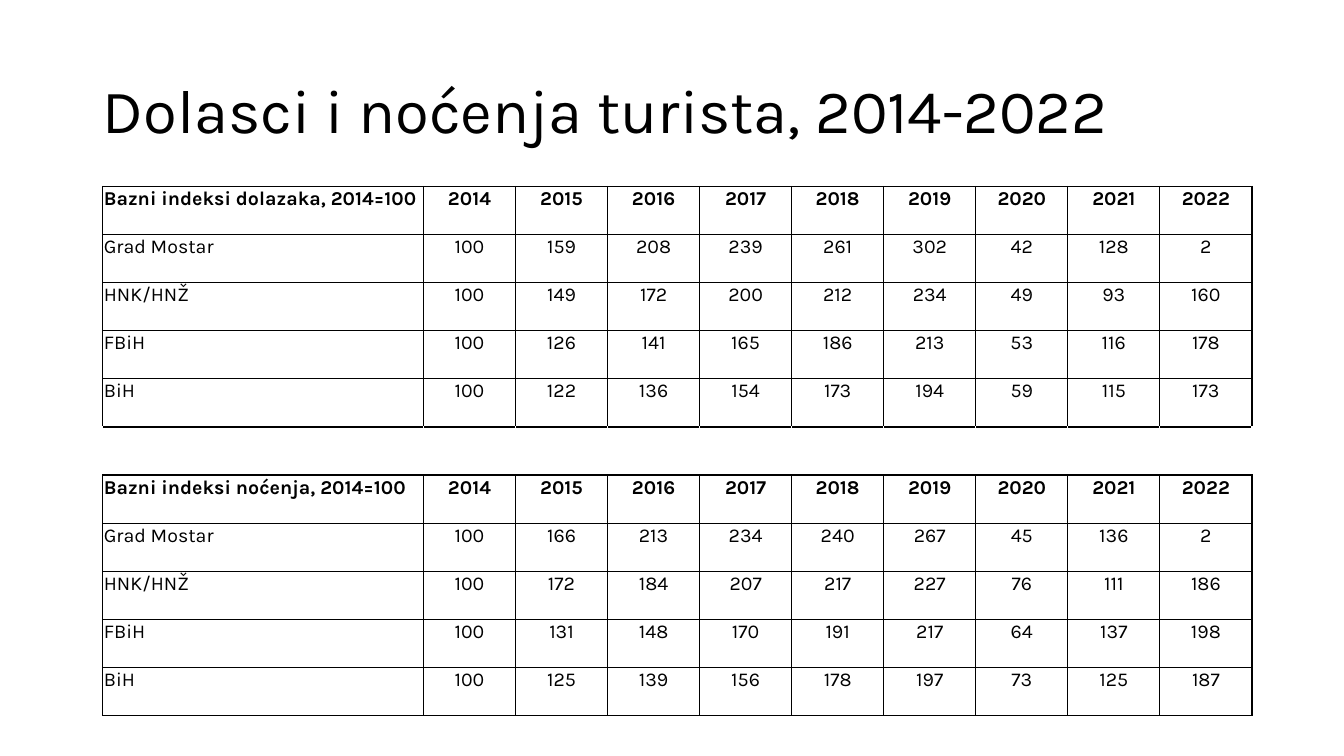
import dataclasses

import lxml.etree
import pptx
import pptx.dml.color
import pptx.enum.text
import pptx.oxml.ns
import pptx.util

WIDTH, HEIGHT = 13.33, 7.5
FONT = "Karla"
COLORS = {"ink": "000000", "paper": "FFFFFF"}
YEARS = range(2014, 2023)

# Table grid, in inches
LEFT, TOP = 1.02, 1.85
LABEL_WIDTH, YEAR_WIDTH = 3.18, 0.913
ROW_HEIGHT = 5.25 / 11
INSET = 0.01


@dataclasses.dataclass(frozen=True)
class IndexBlock:
    heading: str
    series: dict[str, list[int]]

    def rows(self) -> list[list[str]]:
        lines = [[self.heading, *YEARS]]
        lines += [[name, *values] for name, values in self.series.items()]
        return [[str(value) for value in line] for line in lines]


ARRIVALS = IndexBlock("Bazni indeksi dolazaka, 2014=100", {
    "Grad Mostar": [100, 159, 208, 239, 261, 302, 42, 128, 2],
    "HNK/HNŽ": [100, 149, 172, 200, 212, 234, 49, 93, 160],
    "FBiH": [100, 126, 141, 165, 186, 213, 53, 116, 178],
    "BiH": [100, 122, 136, 154, 173, 194, 59, 115, 173],
})
NIGHTS = IndexBlock("Bazni indeksi noćenja, 2014=100", {
    "Grad Mostar": [100, 166, 213, 234, 240, 267, 45, 136, 2],
    "HNK/HNŽ": [100, 172, 184, 207, 217, 227, 76, 111, 186],
    "FBiH": [100, 131, 148, 170, 191, 217, 64, 137, 198],
    "BiH": [100, 125, 139, 156, 178, 197, 73, 125, 187],
})


def style_text(p, size: float, bold: bool = False) -> None:
    for r in p.runs:
        r.font.name = FONT
        r.font.size = pptx.util.Pt(size)
        r.font.bold = bold
        r.font.color.rgb = pptx.dml.color.RGBColor.from_string(COLORS["ink"])


def set_borders(cell, side_color: str) -> None:
    """Draw 1 pt borders; top and bottom are always in ink."""
    qn = pptx.oxml.ns.qn
    tc_pr = cell._tc.get_or_add_tcPr()
    sides = {"L": side_color, "R": side_color, "T": "ink", "B": "ink"}
    for position, (side, color) in enumerate(sides.items()):
        line = lxml.etree.Element(qn(f"a:ln{side}"), w=str(pptx.util.Pt(1)))
        fill = lxml.etree.SubElement(line, qn("a:solidFill"))
        lxml.etree.SubElement(fill, qn("a:srgbClr"), val=COLORS[color])
        tc_pr.insert(position, line)


def fill_cell(cell, text: str, centered: bool, bold: bool) -> None:
    cell.margin_left = cell.margin_right = cell.margin_top = pptx.util.Inches(INSET)
    cell.margin_bottom = 0
    cell.text_frame.text = text
    p = cell.text_frame.paragraphs[0]
    if centered:
        p.alignment = pptx.enum.text.PP_ALIGN.CENTER
    style_text(p, 14, bold)


def add_title(slide, text: str) -> None:
    sp = slide.shapes.title
    sp.left, sp.top = pptx.util.Inches(0.92), pptx.util.Inches(0.4)
    sp.width, sp.height = pptx.util.Inches(11.5), pptx.util.Inches(1.45)
    tf = sp.text_frame
    tf.text = text
    tf.word_wrap = True
    tf.auto_size = pptx.enum.text.MSO_AUTO_SIZE.NONE
    tf.vertical_anchor = pptx.enum.text.MSO_ANCHOR.MIDDLE
    p = tf.paragraphs[0]
    p.alignment = pptx.enum.text.PP_ALIGN.LEFT
    p.line_spacing = 0.9
    style_text(p, 44)


def add_index_table(slide, first: IndexBlock, second: IndexBlock) -> None:
    # An empty row separates the two blocks
    rows = [*first.rows(), [], *second.rows()]
    widths = [LABEL_WIDTH] + [YEAR_WIDTH] * len(YEARS)
    table = slide.shapes.add_table(
        len(rows), len(widths), pptx.util.Inches(LEFT), pptx.util.Inches(TOP),
        pptx.util.Inches(sum(widths)),
        pptx.util.Inches(ROW_HEIGHT * len(rows))).table
    table.first_row = table.horz_banding = False
    for column, width in zip(table.columns, widths):
        column.width = pptx.util.Inches(width)

    headings = {first.heading, second.heading}
    for row, values in zip(table.rows, rows):
        row.height = pptx.util.Inches(ROW_HEIGHT)
        for cell in row.cells:
            cell.fill.background()
            set_borders(cell, "ink" if values else "paper")
        for column, (cell, text) in enumerate(zip(row.cells, values)):
            fill_cell(cell, text, column > 0, values[0] in headings)


def main() -> None:
    prs = pptx.Presentation()
    prs.slide_width = pptx.util.Inches(WIDTH)
    prs.slide_height = pptx.util.Inches(HEIGHT)
    slide = prs.slides.add_slide(prs.slide_layouts.get_by_name("Title Only"))
    add_title(slide, "Dolasci i noćenja turista, 2014-2022")
    add_index_table(slide, ARRIVALS, NIGHTS)
    prs.save("out.pptx")


if __name__ == "__main__":
    main()
